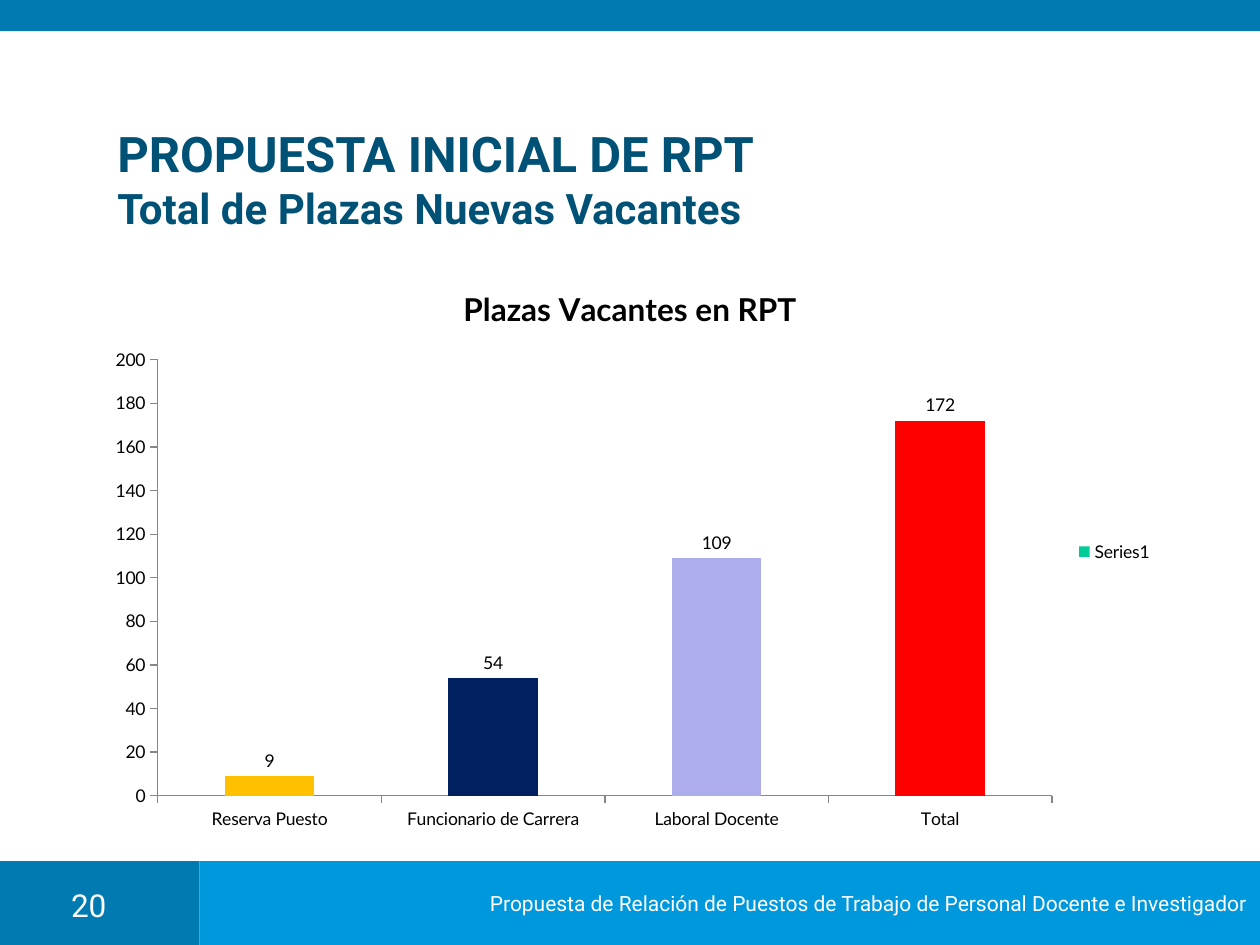
from dataclasses import dataclass

from pptx import Presentation
from pptx.chart.data import CategoryChartData
from pptx.dml.color import RGBColor
from pptx.enum.chart import XL_CHART_TYPE as Kind, XL_LABEL_POSITION as Spot
from pptx.enum.chart import XL_LEGEND_POSITION as Side, XL_TICK_MARK as Tick
from pptx.enum.shapes import MSO_SHAPE as Form
from pptx.enum.text import MSO_ANCHOR as Anchor, MSO_AUTO_SIZE as Fit, PP_ALIGN as Align
from pptx.util import Cm, Pt

HEX = {
    "dark": "007AB1", "light": "0098DC", "title": "005176", "white": "FFFFFF",
    "black": "000000", "axis": "868686", "key": "00CC99", "gold": "FFC000",
    "navy": "002060", "lilac": "ADADEB", "red": "FF0000",
}
WIDE, HIGH = 25.4, 19.05
FOOT = 17.36  # top of the footer
SPLIT = 4.02  # where the page number block meets the footer text


@dataclass
class Band:
    left: float
    top: float
    width: float
    height: float
    color: str


@dataclass
class Post:
    """One column of the chart."""
    name: str
    count: int
    color: str


BANDS = [
    Band(0, FOOT, SPLIT, HIGH - FOOT, "dark"),
    Band(SPLIT, FOOT, WIDE - SPLIT, HIGH - FOOT, "light"),
    Band(0, 0, WIDE, 0.63, "dark"),
]
POSTS = [
    Post("Reserva Puesto", 9, "gold"),
    Post("Funcionario de Carrera", 54, "navy"),
    Post("Laboral Docente", 109, "lilac"),
    Post("Total", 172, "red"),
]


def rgb(name: str) -> RGBColor:
    return RGBColor.from_string(HEX[name])


def paint(part, color: str) -> None:
    part.fill.solid()
    part.fill.fore_color.rgb = rgb(color)


def style(font, size: float, color: str, face: str, bold: bool = False) -> None:
    font.size, font.name, font.bold = Pt(size), face, bold
    font.color.rgb = rgb(color)


def write(shape, *lines: tuple[str, float], color: str = "white", bold: bool = False,
          align=Align.LEFT, anchor=Anchor.TOP, wrap: bool = True) -> None:
    """Put (text, size) lines in one paragraph, split by line breaks."""
    frame = shape.text_frame
    frame.word_wrap, frame.auto_size = wrap, Fit.NONE
    frame.vertical_anchor = anchor
    para = frame.paragraphs[0]
    para.alignment = align
    for i, (text, size) in enumerate(lines):
        if i:
            para.add_line_break()
        run = para.add_run()
        run.text = text
        style(run.font, size, color, "Roboto", bold)


def draw_band(slide, band: Band):
    shape = slide.shapes.add_shape(
        Form.RECTANGLE, Cm(band.left), Cm(band.top), Cm(band.width), Cm(band.height))
    shape.shadow.inherit = False
    paint(shape, band.color)
    shape.line.fill.background()
    return shape


def draw_chart(slide, posts: list[Post]) -> None:
    data = CategoryChartData()
    data.categories = [post.name for post in posts]
    data.add_series("Series1", [post.count for post in posts])
    chart = slide.shapes.add_chart(
        Kind.COLUMN_CLUSTERED, Cm(1.9), Cm(5.29), Cm(21.6), Cm(11.66), data).chart
    style(chart.font, 10, "black", "Lato")

    chart.has_title = True
    head = chart.chart_title.text_frame
    head.text = "Plazas Vacantes en RPT"
    style(head.paragraphs[0].runs[0].font, 18, "black", "Lato", True)
    chart.has_legend = True
    chart.legend.position = Side.RIGHT
    chart.legend.include_in_layout = False

    for axis in (chart.category_axis, chart.value_axis):
        axis.has_major_gridlines = False
        axis.major_tick_mark = Tick.OUTSIDE
        axis.format.line.color.rgb = rgb("axis")
    scale = chart.value_axis
    scale.minimum_scale, scale.maximum_scale, scale.major_unit = 0, 200, 20

    plot = chart.plots[0]
    plot.gap_width, plot.vary_by_categories = 150, False
    plot.has_data_labels = True
    plot.data_labels.show_value = True
    plot.data_labels.position = Spot.OUTSIDE_END
    row = plot.series[0]
    paint(row.format, "key")
    for i, post in enumerate(posts):
        paint(row.points[i].format, post.color)


def main() -> None:
    deck = Presentation()
    deck.slide_width, deck.slide_height = Cm(WIDE), Cm(HIGH)
    slide = deck.slides.add_slide(deck.slide_layouts.get_by_name("Title Only"))

    _, foot, _ = [draw_band(slide, band) for band in BANDS]
    write(foot, ("Propuesta de Relación de Puestos de Trabajo de Personal Docente e Investigador", 12),
          align=Align.RIGHT, anchor=Anchor.MIDDLE, wrap=False)

    title = slide.shapes.title
    title.left, title.top, title.width, title.height = Cm(2.11), Cm(3.05), Cm(21.2), Cm(1.07)
    write(title, ("PROPUESTA INICIAL DE RPT", 28), ("Total de Plazas Nuevas Vacantes", 24),
          color="title", bold=True, anchor=Anchor.MIDDLE)

    page = slide.shapes.add_textbox(Cm(0.89), Cm(17.73), Cm(1.8), Cm(0.81))
    write(page, ("20", 18), align=Align.CENTER)

    draw_chart(slide, POSTS)
    deck.save("out.pptx")


if __name__ == "__main__":
    main()
